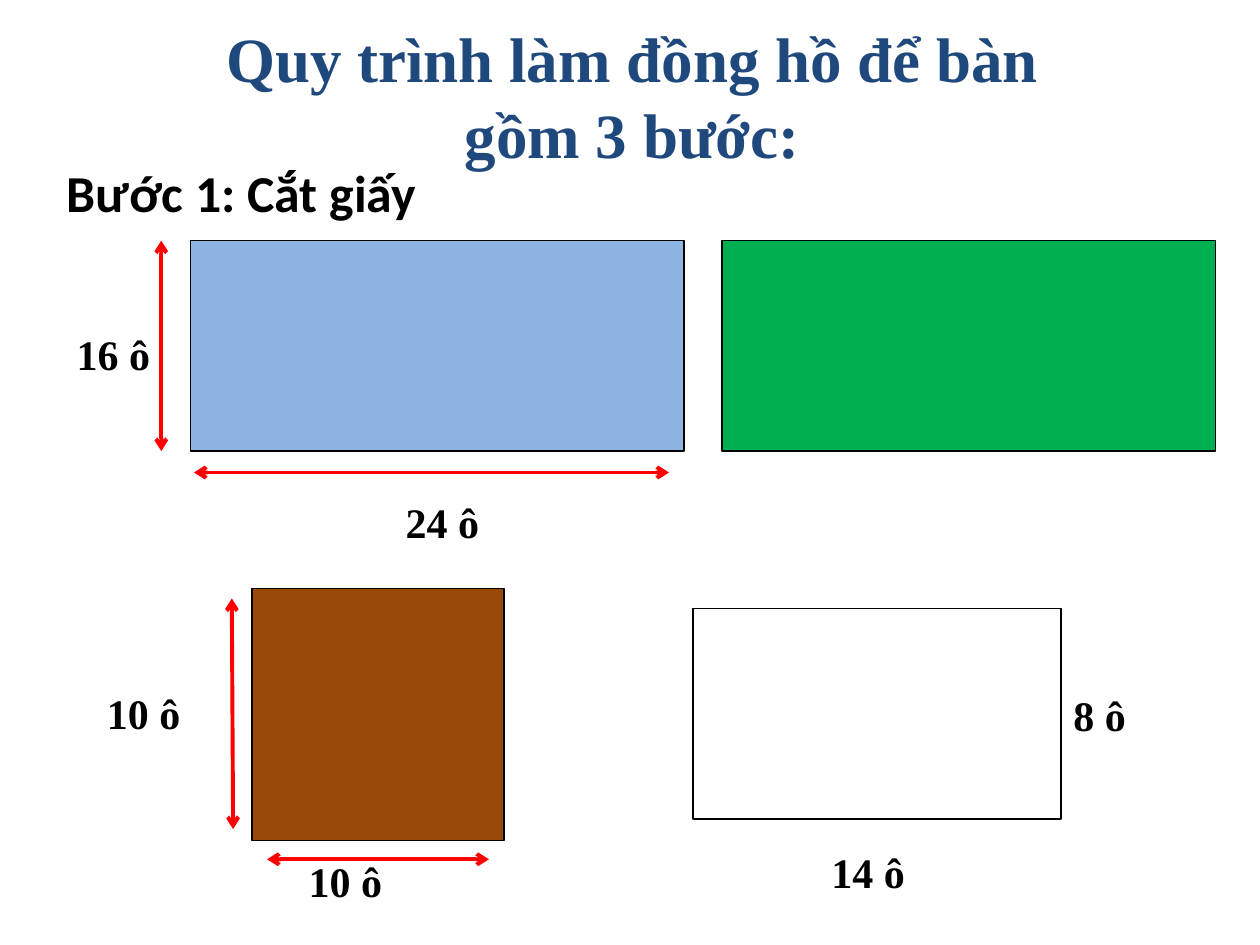
from typing import NamedTuple

from lxml.etree import SubElement
from pptx import Presentation
from pptx.dml.color import RGBColor
from pptx.enum.shapes import MSO_CONNECTOR, MSO_SHAPE
from pptx.enum.text import MSO_ANCHOR, MSO_AUTO_SIZE, PP_ALIGN
from pptx.oxml.ns import qn
from pptx.util import Inches, Pt

HUES = {"title": "1F497D", "text": "000000", "edge": "000000", "arrow": "FF0000",
        "blue": "8EB4E3", "green": "00B050", "brown": "984807"}
SERIF = "Times New Roman"


class Sheet(NamedTuple):
    left: float
    top: float
    width: float
    height: float
    hue: str | None


class Label(NamedTuple):
    text: str
    left: float
    top: float
    width: float = 0.92
    height: float = 0.5
    size: float = 24
    font: str = SERIF


class Arrow(NamedTuple):
    x1: float
    y1: float
    x2: float
    y2: float


SHEETS = [
    Sheet(1.51, 1.91, 3.92, 1.67, "blue"),
    Sheet(5.73, 1.91, 3.92, 1.67, "green"),
    Sheet(2, 4.67, 2, 2, "brown"),
    Sheet(5.5, 4.83, 2.92, 1.67, None),
]
LABELS = [
    Label("Bước 1: Cắt giấy", 0.43, 1.23, 9, 0.55, 29.6, "Calibri"),
    Label("16 ô", 0.51, 2.56),
    Label("24 ô", 3.12, 3.89),
    Label("10 ô", 0.75, 5.41),
    Label("10 ô", 2.35, 6.74),
    Label("8 ô", 8.42, 5.42),
    Label("14 ô", 6.5, 6.67),
]
ARROWS = [
    Arrow(1.28, 1.91, 1.28, 3.58),
    Arrow(1.54, 3.75, 5.31, 3.75),
    Arrow(1.84, 4.75, 1.85, 6.58),
    Arrow(2.12, 6.82, 3.88, 6.82),
]


def tint(name: str) -> RGBColor:
    return RGBColor.from_string(HUES[name])


def add_run(para, text: str, size: float, font: str, hue: str) -> None:
    run = para.add_run()
    run.text = text
    run.font.size = Pt(size)
    run.font.name = font
    run.font.bold = True
    run.font.color.rgb = tint(hue)


def draw_title(slide) -> None:
    title = slide.shapes.title
    title.left, title.top = Inches(0.51), Inches(0.44)
    title.width, title.height = Inches(9.14), Inches(0.63)
    frame = title.text_frame
    frame.word_wrap = True
    frame.auto_size = MSO_AUTO_SIZE.NONE
    frame.vertical_anchor = MSO_ANCHOR.MIDDLE
    para = frame.paragraphs[0]
    para.alignment = PP_ALIGN.CENTER
    add_run(para, "Quy trình làm đồng hồ để bàn ", 36, SERIF, "title")
    para.add_line_break()
    add_run(para, "gồm 3 bước: ", 36, SERIF, "title")


def draw_sheet(slide, sheet: Sheet) -> None:
    box = [Inches(n) for n in sheet[:4]]
    shape = slide.shapes.add_shape(MSO_SHAPE.RECTANGLE, *box)
    shape.shadow.inherit = False
    if sheet.hue:
        shape.fill.solid()
        shape.fill.fore_color.rgb = tint(sheet.hue)
    else:
        shape.fill.background()
    shape.line.color.rgb = tint("edge")
    shape.line.width = Pt(0.75)


def draw_label(slide, label: Label) -> None:
    box = [Inches(n) for n in label[1:5]]
    frame = slide.shapes.add_textbox(*box).text_frame
    frame.word_wrap = True
    add_run(frame.paragraphs[0], label.text, label.size, label.font, "text")


def draw_arrow(slide, arrow: Arrow) -> None:
    ends = [Inches(n) for n in arrow]
    link = slide.shapes.add_connector(MSO_CONNECTOR.STRAIGHT, *ends)
    link.line.color.rgb = tint("arrow")
    link.line.width = Pt(2.25)
    stroke = link.line._get_or_add_ln()
    for tag in ("a:headEnd", "a:tailEnd"):
        SubElement(stroke, qn(tag), type="arrow")
    SubElement(link._element.spPr, qn("a:effectLst"))


def main() -> None:
    deck = Presentation()
    deck.slide_width, deck.slide_height = Inches(10), Inches(7.5)
    slide = deck.slides.add_slide(deck.slide_layouts[5])

    # Heading
    draw_title(slide)
    # Paper sheets
    for sheet in SHEETS:
        draw_sheet(slide, sheet)
    # Step name and measures
    for label in LABELS:
        draw_label(slide, label)
    # Size arrows
    for arrow in ARROWS:
        draw_arrow(slide, arrow)

    deck.save("out.pptx")


if __name__ == "__main__":
    main()
